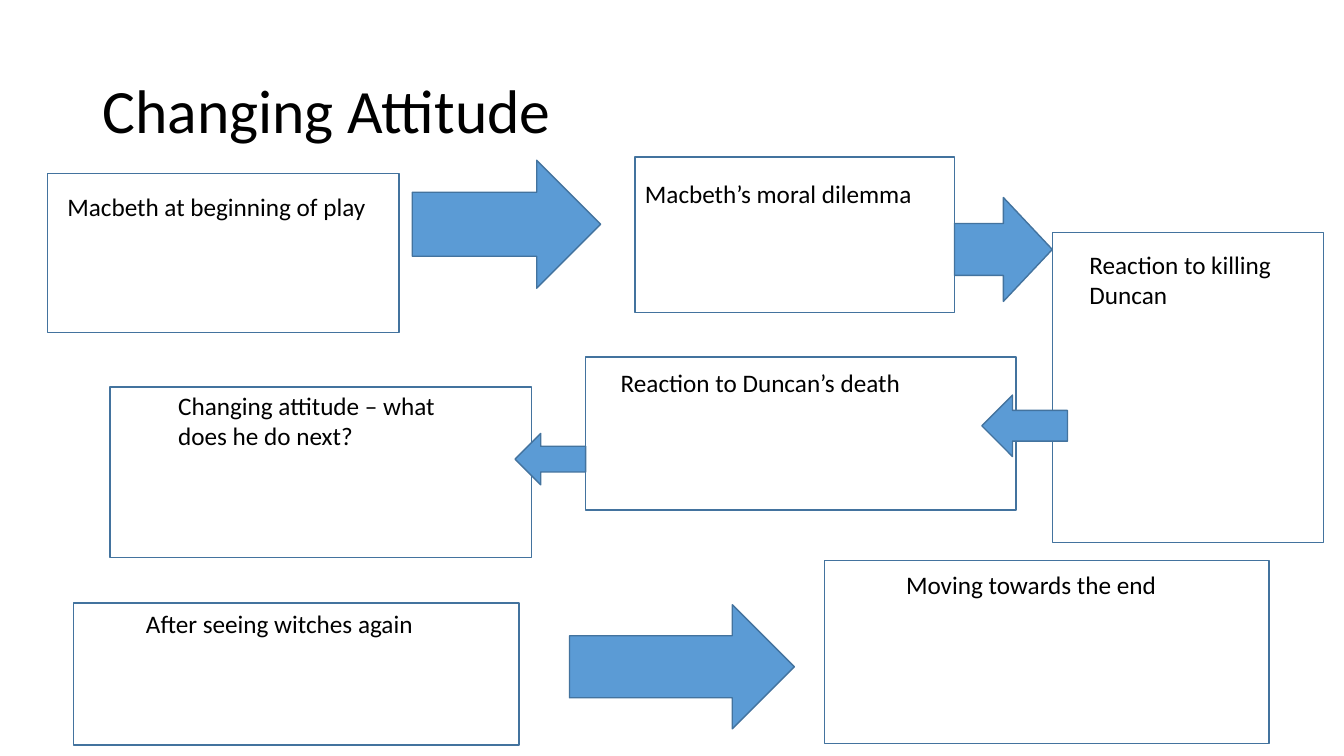
from pptx import Presentation
from pptx.dml.color import RGBColor
from pptx.enum.shapes import MSO_SHAPE
from pptx.enum.text import MSO_ANCHOR, MSO_AUTO_SIZE, PP_ALIGN
from pptx.util import Pt

BLACK = RGBColor(0x00, 0x00, 0x00)
ARROW_BLUE = RGBColor(0x5B, 0x9B, 0xD5)
OUTLINE_BLUE = RGBColor(0x43, 0x73, 0x9E)

prs = Presentation()
prs.slide_width, prs.slide_height = Pt(960), Pt(540)
slide = prs.slides.add_slide(prs.slide_layouts[5])


def write(frame, wording, size):
    frame.text = wording
    frame.word_wrap = True
    paragraph = frame.paragraphs[0]
    paragraph.alignment = PP_ALIGN.LEFT
    font = paragraph.runs[0].font
    for key, value in {"name": "Calibri", "size": Pt(size)}.items():
        setattr(font, key, value)
    font.color.rgb = BLACK


def add_outlined(kind, place):
    shape = slide.shapes.add_shape(kind, *map(Pt, place))
    shape.shadow.inherit = False
    shape.line.color.rgb = OUTLINE_BLUE
    shape.line.width = Pt(1)
    return shape


heading = slide.shapes.title
for side, length in {"left": 66, "top": 28.8, "width": 828, "height": 104.4}.items():
    setattr(heading, side, Pt(length))
write(heading.text_frame, "Changing Attitude", 44)
heading.text_frame.auto_size = MSO_AUTO_SIZE.NONE
heading.text_frame.vertical_anchor = MSO_ANCHOR.MIDDLE
heading.text_frame.paragraphs[0].line_spacing = 0.9

# Each stage: wording, place of the wording, place of its box (left, top, width, height)
stages = [
    ("Macbeth at beginning of play", (41, 133.2, 262.8, 116.6), (33.8, 123.8, 251.3, 113.8)),
    ("Macbeth’s moral dilemma", (453.6, 123.8, 247.7, 72.7), (453.6, 112.3, 228.2, 110.9)),
    ("Reaction to killing Duncan", (771.1, 174.2, 156.2, 51.1), (751.7, 165.9, 193.7, 221.8)),
    ("Reaction to Duncan’s death", (436.3, 258.5, 274.3, 28.8), (418.3, 254.9, 307.4, 109.4)),
    ("Changing attitude – what does he do next?", (120.2, 275, 216.7, 51.1), (78.5, 276.5, 301, 121.7)),
    ("After seeing witches again", (97.2, 431.3, 228.2, 28.8), (52.6, 430.6, 318.2, 101.5)),
    ("Moving towards the end", (640.1, 403.2, 262.1, 28.8), (589, 400.3, 317.5, 131)),
]
for wording, place, _ in stages:
    label = slide.shapes.add_textbox(*map(Pt, place))
    write(label.text_frame, wording, 18)

for _, _, place in stages:
    add_outlined(MSO_SHAPE.RECTANGLE, place).fill.background()

arrows = [
    (MSO_SHAPE.RIGHT_ARROW, (294.5, 114.5, 134.6, 91.4)),
    (MSO_SHAPE.RIGHT_ARROW, (681.8, 141.1, 69.9, 74.2)),
    (MSO_SHAPE.LEFT_ARROW, (701.3, 282.2, 61.2, 43.9)),
    (MSO_SHAPE.LEFT_ARROW, (367.9, 309.6, 50.4, 36.7)),
    (MSO_SHAPE.RIGHT_ARROW, (406.8, 432, 160.6, 88.6)),
]
for direction, place in arrows:
    arrow = add_outlined(direction, place)
    arrow.fill.solid()
    arrow.fill.fore_color.rgb = ARROW_BLUE

prs.save("out.pptx")
